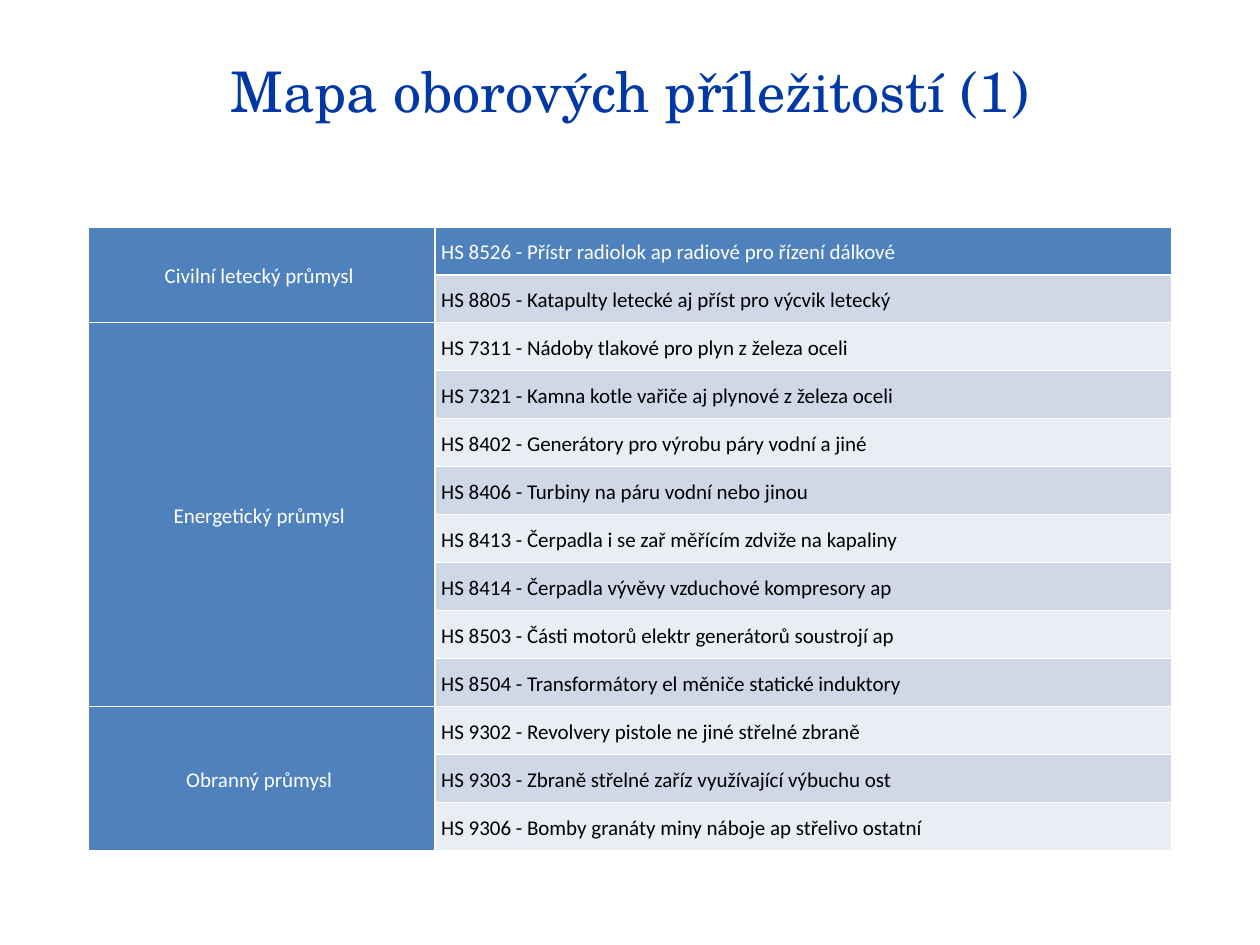
import dataclasses

import pptx
import pptx.dml.color
import pptx.enum.text
import pptx.oxml
import pptx.oxml.ns
import pptx.util

ALIGN = pptx.enum.text.PP_ALIGN
MIDDLE = pptx.enum.text.MSO_ANCHOR.MIDDLE

SECTORS = {
    "Civilní letecký průmysl ": [
        "HS 8526 - Přístr radiolok ap radiové pro řízení dálkové",
        "HS 8805 - Katapulty letecké aj příst pro výcvik letecký",
    ],
    "Energetický průmysl ": [
        "HS 7311 - Nádoby tlakové pro plyn z železa oceli",
        "HS 7321 - Kamna kotle vařiče aj plynové z železa oceli",
        "HS 8402 - Generátory pro výrobu páry vodní a jiné",
        "HS 8406 - Turbiny na páru vodní nebo jinou",
        "HS 8413 - Čerpadla i se zař měřícím zdviže na kapaliny",
        "HS 8414 - Čerpadla vývěvy vzduchové kompresory ap",
        "HS 8503 - Části motorů elektr generátorů soustrojí ap",
        "HS 8504 - Transformátory el měniče statické induktory",
    ],
    "Obranný průmysl ": [
        "HS 9302 - Revolvery pistole ne jiné střelné zbraně",
        "HS 9303 - Zbraně střelné zaříz využívající výbuchu ost",
        "HS 9306 - Bomby granáty miny náboje ap střelivo ostatní",
    ],
}


@dataclasses.dataclass(frozen=True)
class Theme:
    title_font: str = "TeX Gyre Schola"
    body_font: str = "Calibri"
    title_size: int = 32
    body_size: int = 12
    title: str = "0039A6"
    accent: str = "4F81BD"
    bands: tuple = ("E9EDF4", "D0D8E8")
    light: str = "FFFFFF"
    dark: str = "000000"
    border: float = 1
    spacing: float = 1.15
    inset_x: float = 0.05
    inset_y: float = 0.07


class SlideBuilder:
    def __init__(self, deck, theme):
        self.deck = deck
        self.theme = theme
        self.page = deck.slides.add_slide(deck.slide_layouts[6])

    def area(self, left, top, width, height):
        across, down = self.deck.slide_width, self.deck.slide_height
        return [round(share * side) for share, side in
                ((left, across), (top, down), (width, across), (height, down))]

    def add_text(self, frame, text, font, size, color, align):
        para = frame.paragraphs[0]
        para.alignment = align
        span = para.add_run()
        span.text = text
        span.font.name = font
        span.font.size = pptx.util.Pt(size)
        span.font.color.rgb = pptx.dml.color.RGBColor.from_string(color)
        return para

    def title(self, text, *shares):
        box = self.page.shapes.add_textbox(*self.area(*shares))
        box.text_frame.word_wrap = True
        box.text_frame.vertical_anchor = MIDDLE
        self.add_text(box.text_frame, text, self.theme.title_font,
                      self.theme.title_size, self.theme.title, ALIGN.CENTER)

    def borders(self, cell):
        properties = cell._tc.get_or_add_tcPr()
        width = pptx.util.Pt(self.theme.border)
        for position, side in enumerate(("lnL", "lnR", "lnT", "lnB")):
            properties.insert(position, pptx.oxml.parse_xml(
                f'<a:{side} {pptx.oxml.ns.nsdecls("a")} w="{width}"><a:solidFill>'
                f'<a:srgbClr val="{self.theme.light}"/></a:solidFill></a:{side}>'))

    def fill(self, cell, color):
        cell.fill.solid()
        cell.fill.fore_color.rgb = pptx.dml.color.RGBColor.from_string(color)
        self.borders(cell)

    def label(self, cell, text, color, align):
        cell.vertical_anchor = MIDDLE
        cell.margin_left = cell.margin_right = pptx.util.Inches(self.theme.inset_x)
        cell.margin_top = cell.margin_bottom = pptx.util.Inches(self.theme.inset_y)
        para = self.add_text(cell.text_frame, text, self.theme.body_font,
                             self.theme.body_size, color, align)
        para.line_spacing = self.theme.spacing

    def sector_table(self, sectors, first_share, *shares):
        theme = self.theme
        left, top, width, height = self.area(*shares)
        count = sum(len(products) for products in sectors.values())
        table = self.page.shapes.add_table(count, 2, left, top, width, height).table
        table.columns[0].width = round(width * first_share)
        table.columns[1].width = width - table.columns[0].width
        row = 0
        for sector, products in sectors.items():
            head = table.cell(row, 0)
            head.merge(table.cell(row + len(products) - 1, 0))
            self.label(head, sector, theme.light, ALIGN.CENTER)
            for product in products:
                self.fill(table.cell(row, 0), theme.accent)
                cell = table.cell(row, 1)
                self.fill(cell, theme.bands[row % 2] if row else theme.accent)
                self.label(cell, product, theme.dark if row else theme.light, ALIGN.LEFT)
                row += 1


def main():
    deck = pptx.Presentation()
    deck.slide_width = pptx.util.Inches(10)
    deck.slide_height = pptx.util.Inches(7.5)
    builder = SlideBuilder(deck, Theme())
    builder.title("Mapa oborových příležitostí (1)", 0.05, 0.01, 0.9, 0.17)
    builder.sector_table(SECTORS, 0.32, 0.07, 0.24, 0.86, 0.66)
    deck.save("out.pptx")


if __name__ == "__main__":
    main()
